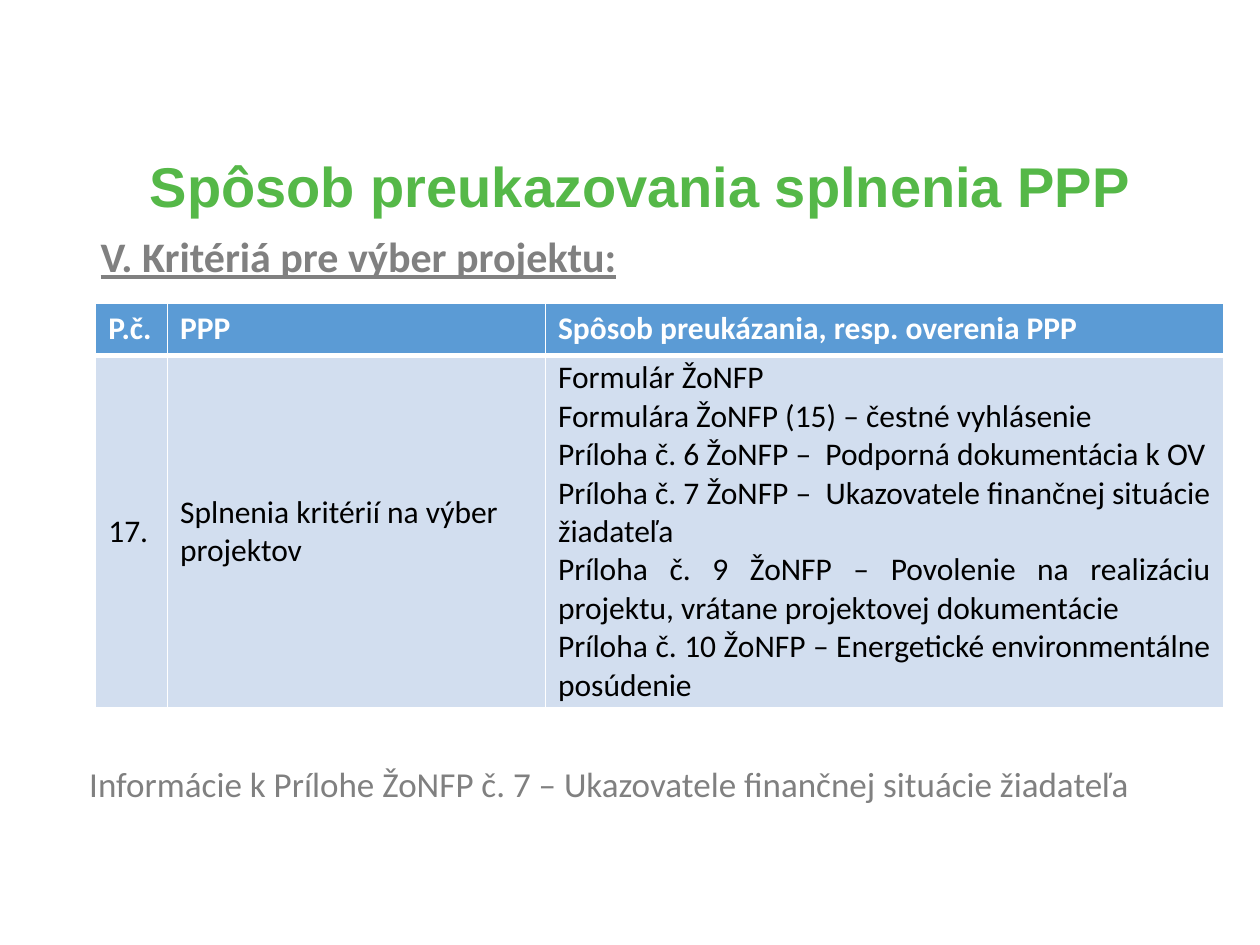
"""Build the slide on proving that the project selection criteria are met."""
import pptx
import pptx.dml.color
import pptx.enum.text
import pptx.oxml.ns
import pptx.util
from lxml import etree

Inches = pptx.util.Inches
RGBColor = pptx.dml.color.RGBColor
Align = pptx.enum.text.PP_ALIGN
Anchor = pptx.enum.text.MSO_ANCHOR

GREEN = RGBColor(0x55, 0xB8, 0x48)
GRAY = RGBColor(0x80, 0x80, 0x80)
WHITE = RGBColor(0xFF, 0xFF, 0xFF)
BLACK = RGBColor(0x00, 0x00, 0x00)
BLUE = RGBColor(0x5B, 0x9B, 0xD5)
PALE_BLUE = RGBColor(0xD2, 0xDE, 0xEF)

TITLE = "Spôsob preukazovania splnenia PPP"
SUBTITLE = "V. Kritériá pre výber projektu:"
NOTE = "Informácie k Prílohe ŽoNFP č. 7 – Ukazovatele finančnej situácie žiadateľa"
PROOFS = [
    "Formulár ŽoNFP",
    "Formulára ŽoNFP (15) – čestné vyhlásenie",
    "Príloha č. 6 ŽoNFP –  Podporná dokumentácia k\u00a0OV",
    "Príloha č. 7 ŽoNFP –  Ukazovatele finančnej situácie žiadateľa",
    "Príloha č. 9 ŽoNFP – Povolenie na realizáciu projektu, vrátane projektovej dokumentácie",
    "Príloha č. 10 ŽoNFP – Energetické environmentálne posúdenie",
]
ROWS = [
    [["P.č."], ["PPP"], ["Spôsob preukázania, resp. overenia PPP"]],
    [["17."], ["Splnenia kritérií na výber projektov"], PROOFS],
]
COLUMN_WIDTHS = [0.57, 3, 5.38]
ROW_HEIGHTS = [0.41, 2.8]
ROW_STYLES = [
    {"fill": BLUE, "color": WHITE, "bold": True, "anchor": Anchor.TOP, "margin": 0.05,
     "borders": {"lnL": 1, "lnR": 1, "lnT": 1, "lnB": 3}},
    {"fill": PALE_BLUE, "color": BLACK, "bold": False, "anchor": Anchor.MIDDLE, "margin": 0,
     "borders": {"lnL": 1, "lnR": 1, "lnT": 3, "lnB": 1}},
]


def write(text_frame, lines, alignment, color, **font_values):
    text_frame.text = "\n".join(lines)
    text_frame.word_wrap = True
    for paragraph in text_frame.paragraphs:
        paragraph.alignment = alignment
        paragraph.font.color.rgb = color
        for name, value in font_values.items():
            setattr(paragraph.font, name, value)


def add_text(slide, box, text, **font_values):
    shape = slide.shapes.add_textbox(*map(Inches, box))
    write(shape.text_frame, [text], Align.JUSTIFY, GRAY, name="Calibri", **font_values)


def add_borders(cell, widths):
    properties = cell._tc.get_or_add_tcPr()
    for side, points in widths.items():
        line = etree.SubElement(properties, pptx.oxml.ns.qn(f"a:{side}"), w=str(pptx.util.Pt(points)))
        fill = etree.SubElement(line, pptx.oxml.ns.qn("a:solidFill"))
        etree.SubElement(fill, pptx.oxml.ns.qn("a:srgbClr"), val=str(WHITE))


def add_criteria_table(slide):
    frame = slide.shapes.add_table(
        len(ROWS), len(COLUMN_WIDTHS), Inches(0.76), Inches(2.41),
        Inches(sum(COLUMN_WIDTHS)), Inches(sum(ROW_HEIGHTS)))
    table = frame.table
    for column, width in zip(table.columns, COLUMN_WIDTHS):
        column.width = Inches(width)
    for row, height, contents, style in zip(table.rows, ROW_HEIGHTS, ROWS, ROW_STYLES):
        row.height = Inches(height)
        for cell, lines in zip(row.cells, contents):
            add_borders(cell, style["borders"])
            cell.fill.solid()
            cell.fill.fore_color.rgb = style["fill"]
            cell.vertical_anchor = style["anchor"]
            cell.margin_top = cell.margin_bottom = Inches(style["margin"])
            alignment = Align.JUSTIFY if lines is PROOFS else Align.LEFT
            write(cell.text_frame, lines, alignment, style["color"],
                  name="Calibri", size=pptx.util.Pt(18), bold=style["bold"])


def main():
    presentation = pptx.Presentation()
    presentation.slide_width, presentation.slide_height = Inches(10), Inches(7.5)
    slide = presentation.slides.add_slide(presentation.slide_layouts[5])

    title = slide.shapes.title
    title.left, title.top, title.width, title.height = map(Inches, (0.61, 1.02, 8.95, 0.96))
    title.text_frame.vertical_anchor = Anchor.MIDDLE
    title.text_frame.auto_size = pptx.enum.text.MSO_AUTO_SIZE.NONE
    write(title.text_frame, [TITLE], Align.CENTER, GREEN,
          name="Arial", size=pptx.util.Pt(32), bold=True)
    title.text_frame.paragraphs[0].line_spacing = 0.9

    add_text(slide, (0.7, 1.78, 8.53, 2.59), SUBTITLE,
             size=pptx.util.Pt(24), bold=True, underline=True)
    add_criteria_table(slide)
    add_text(slide, (0.61, 6, 8.95, 0.44), NOTE, size=pptx.util.Pt(20))
    presentation.save("out.pptx")


if __name__ == "__main__":
    main()
